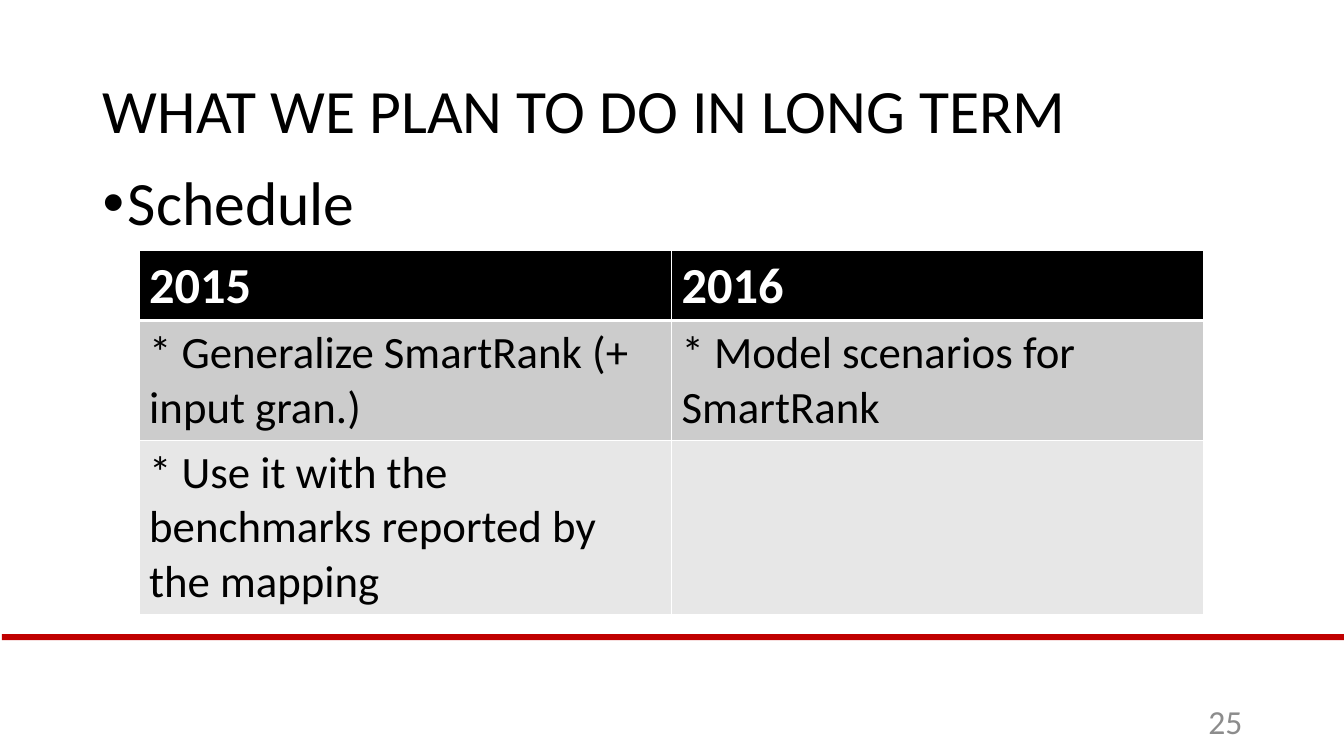
from pptx import Presentation
from pptx.dml.color import RGBColor
from pptx.enum.shapes import MSO_SHAPE
from pptx.enum.text import MSO_ANCHOR, PP_ALIGN
from pptx.oxml.ns import qn
from pptx.util import Inches, Pt
from lxml import etree

RECTANGLE = MSO_SHAPE.RECTANGLE
TOP, MIDDLE = MSO_ANCHOR.TOP, MSO_ANCHOR.MIDDLE
LEFT, RIGHT = PP_ALIGN.LEFT, PP_ALIGN.RIGHT

# Content
TITLE = "WHAT WE PLAN TO DO IN LONG TERM"
BULLET = "Schedule"
SCHEDULE = [
    ("2015", "2016"),
    ("* Generalize SmartRank (+ input gran.)", "* Model scenarios for SmartRank"),
    ("* Use it with the benchmarks reported by the mapping", ""),
]
PAGE_NUMBER = "25"

# Style
FONT = "Calibri"
COLORS = {"black": "000000", "white": "FFFFFF", "red": "C00000", "gray": "8C8C8C",
          "dark band": "CCCCCC", "light band": "E7E7E7"}
ROW_FILLS = ("black", "dark band", "light band")
ROW_HEIGHTS = (0.7, 1.19, 1.73)
COLUMN_WIDTH = 5.28
BORDER_SIDES = ("L", "R", "T", "B")


def color(name):
    return RGBColor.from_string(COLORS[name])


def write(frame, text, size, color_name="black", bold=False, align=LEFT, anchor=TOP, spacing=1.0):
    frame.word_wrap = True
    frame.vertical_anchor = anchor
    para = frame.paragraphs[0]
    para.alignment = align
    para.line_spacing = spacing
    span = para.add_run()
    span.text = text
    for name, value in {"name": FONT, "size": Pt(size), "bold": bold}.items():
        setattr(span.font, name, value)
    span.font.color.rgb = color(color_name)
    return para


def add_bullet(para, indent):
    properties = para._p.get_or_add_pPr()
    properties.set("marL", str(indent))
    properties.set("indent", str(-indent))
    etree.SubElement(properties, qn("a:buFont"), typeface="Arial")
    etree.SubElement(properties, qn("a:buChar"), char="•")


def set_borders(cell, widths):
    properties = cell._tc.get_or_add_tcPr()
    for position, side in enumerate(BORDER_SIDES):
        line = etree.Element(qn("a:ln" + side), w=str(Pt(widths.get(side, 1))))
        fill = etree.SubElement(line, qn("a:solidFill"))
        etree.SubElement(fill, qn("a:srgbClr"), val=COLORS["white"])
        properties.insert(position, line)


deck = Presentation()
deck.slide_width, deck.slide_height = Inches(13.33), Inches(7.5)
page = deck.slides.add_slide(deck.slide_layouts[5])

# Red rule above the footer
rule = page.shapes.add_shape(RECTANGLE, Inches(0.02), Inches(6.29), Inches(13.33), Inches(0.06))
rule.shadow.inherit = False
rule.fill.solid()
rule.fill.fore_color.rgb = color("red")
rule.line.fill.background()

# Title
title = page.shapes.title
title.left, title.top = Inches(0.92), Inches(0.4)
title.width, title.height = Inches(11.5), Inches(1.45)
write(title.text_frame, TITLE, 44, anchor=MIDDLE, spacing=0.9)

# Bullet heading
body = page.shapes.add_textbox(Inches(0.92), Inches(1.66), Inches(11.5), Inches(0.8))
add_bullet(write(body.text_frame, BULLET, 44, spacing=0.9), Inches(0.25))

# Schedule table
frame = page.shapes.add_table(len(SCHEDULE), len(SCHEDULE[0]), Inches(1.38), Inches(2.48),
                              Inches(COLUMN_WIDTH * 2), Inches(sum(ROW_HEIGHTS)))
table = frame.table
for column in table.columns:
    column.width = Inches(COLUMN_WIDTH)
for index, entries in enumerate(SCHEDULE):
    table.rows[index].height = Inches(ROW_HEIGHTS[index])
    is_header = index == 0
    for column, text in enumerate(entries):
        cell = table.cell(index, column)
        cell.fill.solid()
        cell.fill.fore_color.rgb = color(ROW_FILLS[index])
        set_borders(cell, {"B": 3} if is_header else {"T": 3} if index == 1 else {})
        if text:
            write(cell.text_frame, text, 36 if is_header else 32,
                  "white" if is_header else "black", bold=is_header)

# Page number
number = page.shapes.add_textbox(Inches(9.42), Inches(6.95), Inches(3), Inches(0.4))
write(number.text_frame, PAGE_NUMBER, 24, "gray", align=RIGHT, anchor=MIDDLE)

deck.save("out.pptx")
